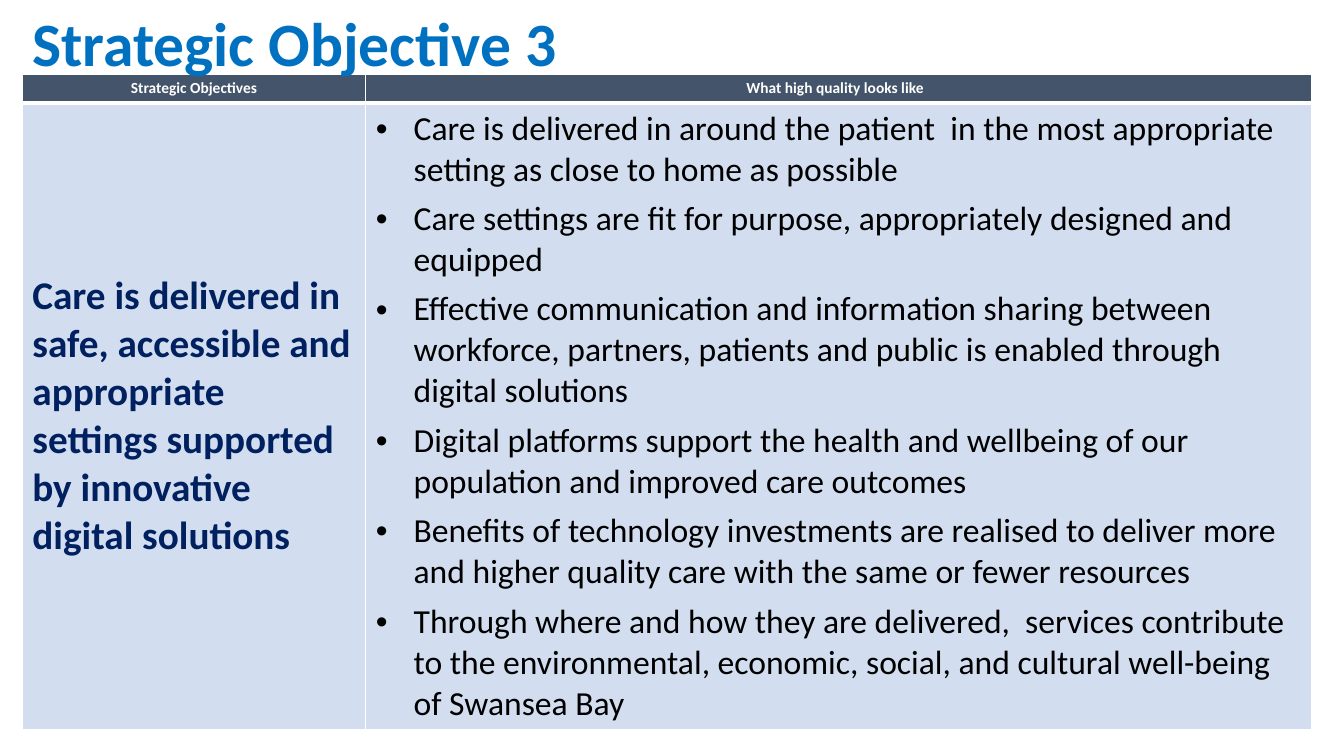
from pptx import Presentation
from pptx import util as u
from pptx.dml import color
from pptx.enum import text
from pptx.oxml import xmlchemy

HEADINGS = ["Strategic Objectives", "What high quality looks like  "]
OBJECTIVE = ("Care is delivered in safe, accessible and appropriate settings "
             "supported by innovative digital solutions")
QUALITIES = [
    "Care is delivered in around the patient  in the most appropriate setting as close to home as possible",
    "Care settings are fit for purpose, appropriately designed and equipped",
    "Effective communication and information sharing between workforce, partners, patients and public "
    "is enabled through digital solutions",
    "Digital platforms support the health and wellbeing of our population and improved care outcomes",
    "Benefits of technology investments are realised to deliver more and higher quality care "
    "with the same or fewer resources",
    "Through where and how they are delivered,  services contribute to the environmental, economic, "
    "social, and cultural well-being of Swansea Bay",
]


def rgb(value):
    return color.RGBColor.from_string(value)


def add_child(parent, tag, **attributes):
    child = xmlchemy.OxmlElement(tag)
    for name, value in attributes.items():
        child.set(name, str(value))
    parent.append(child)
    return child


class ObjectivePage:
    """Holds the text styles and the page, and adds each kind of element."""

    FONT = "Calibri"
    STYLES = {
        "title": {"size": u.Pt(44), "bold": True, "color": "0070C0"},
        "heading": {"size": u.Pt(11), "bold": True, "color": "FFFFFF"},
        "objective": {"size": u.Pt(28), "bold": True, "color": "002060"},
        "quality": {"size": u.Pt(24), "bold": False, "color": "000000"},
    }

    def __init__(self, deck):
        self.page = deck.slides.add_slide(deck.slide_layouts[6])

    def add_lines(self, frame, lines, style, align=text.PP_ALIGN.LEFT, bullets=False):
        for index, line in enumerate(lines):
            para = frame.add_paragraph() if index else frame.paragraphs[0]
            para.alignment = align
            if bullets:
                self.bullet(para)
            span = para.add_run()
            span.text = line
            span.font.name = self.FONT
            for name, value in self.STYLES[style].items():
                if name == "color":
                    span.font.color.rgb = rgb(value)
                else:
                    setattr(span.font, name, value)

    def bullet(self, para):
        para.space_after = u.Pt(6)
        props = para._p.get_or_add_pPr()
        props.set("marL", str(u.Pt(27)))
        props.set("indent", str(u.Pt(-27)))
        add_child(props, "a:buFont", typeface="Arial")
        add_child(props, "a:buChar", char="•")

    def title(self, line, left, top, width, height):
        box = self.page.shapes.add_textbox(*map(u.Pt, (left, top, width, height)))
        box.text_frame.word_wrap = False
        self.add_lines(box.text_frame, [line], "title")

    def table(self, left, top, widths, heights):
        frame = self.page.shapes.add_table(
            len(heights), len(widths), *map(u.Pt, (left, top, sum(widths), sum(heights))))
        grid = frame.table
        for column, width in zip(grid.columns, widths):
            column.width = u.Pt(width)
        for row, height in zip(grid.rows, heights):
            row.height = u.Pt(height)
        return grid

    def cell(self, cell, lines, style, fill, line_below=1, **layout):
        props = cell._tc.get_or_add_tcPr()
        for side, width in {"L": 1, "R": 1, "T": 1, "B": line_below}.items():
            line = add_child(props, f"a:ln{side}", w=u.Pt(width))
            add_child(add_child(line, "a:solidFill"), "a:srgbClr", val="FFFFFF")
        cell.fill.solid()
        cell.fill.fore_color.rgb = rgb(fill)
        cell.vertical_anchor = text.MSO_ANCHOR.MIDDLE
        self.add_lines(cell.text_frame, lines, style, **layout)


def main():
    deck = Presentation()
    deck.slide_width, deck.slide_height = u.Pt(960), u.Pt(540)
    page = ObjectivePage(deck)
    grid = page.table(16, 52.9, widths=[245.3, 675.5], heights=[20.4, 440])
    for column, heading in enumerate(HEADINGS):
        page.cell(grid.cell(0, column), [heading], "heading", "44546A",
                  line_below=3, align=text.PP_ALIGN.CENTER)
    page.cell(grid.cell(1, 0), [OBJECTIVE], "objective", "D2DEEF")
    page.cell(grid.cell(1, 1), QUALITIES, "quality", "D2DEEF", bullets=True)
    page.title("Strategic Objective 3", 16, 0, 393, 60.6)
    deck.save("out.pptx")


if __name__ == "__main__":
    main()
